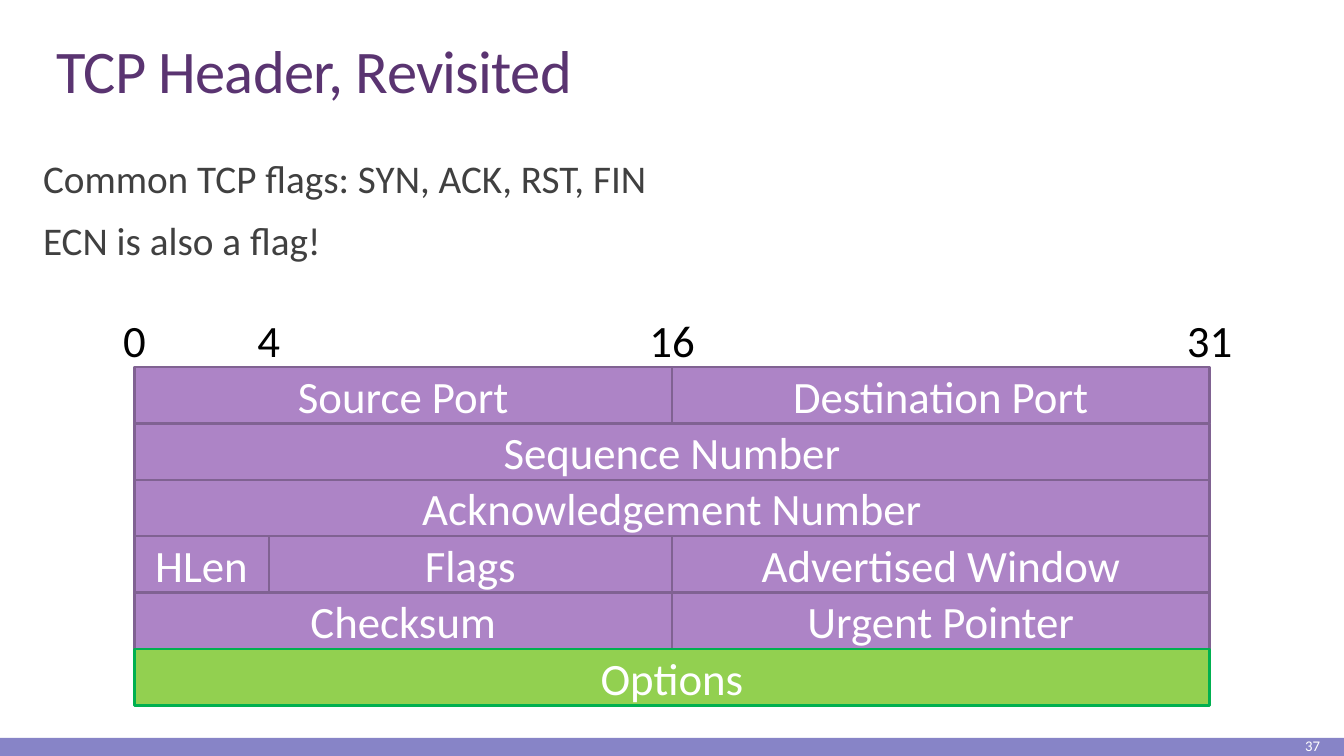
from pptx import Presentation
from pptx.dml.color import RGBColor
from pptx.enum.shapes import MSO_SHAPE as Shape
from pptx.enum.text import MSO_ANCHOR as Anchor, PP_ALIGN as Align
from pptx.util import Inches, Pt

TITLE = "TCP Header, Revisited"
NOTES = ["Common TCP flags: SYN, ACK, RST, FIN", "ECN is also a flag!"]
PAGE_NUMBER = "37"

# Bit number shown, bit offset where it stands
BIT_MARKS = [("0", 0), ("4", 4), ("16", 16), ("31", 32)]

# Header rows: field name, width in bits
HEADER_ROWS = [
    [("Source Port", 16), ("Destination Port", 16)],
    [("Sequence Number", 32)],
    [("Acknowledgement Number", 32)],
    [("HLen", 4), ("Flags", 12), ("Advertised Window", 16)],
    [("Checksum", 16), ("Urgent Pointer", 16)],
    [("Options", 32)],
]

COLORS = {
    "title": "5A3471", "body": "404040", "mark": "000000", "white": "FFFFFF",
    "bar": "8784C7", "field": "AD84C6", "field_line": "806292",
    "options": "92D050", "options_line": "00B050",
}
FONT = "Calibri"
HEADER_LEFT, HEADER_TOP = 1.0, 2.73
BIT_WIDTH, ROW_HEIGHT = 0.25, 0.42
MARK_WIDTH, MARK_HEIGHT, MARK_TOP = 0.65, 0.66, 2.2


def color(name):
    return RGBColor.from_string(COLORS[name])


def write(shape, text, size, color_name, align=Align.LEFT, anchor=Anchor.MIDDLE):
    frame = shape.text_frame
    frame.word_wrap = True
    frame.vertical_anchor = anchor
    frame.text = text
    for paragraph in frame.paragraphs:
        paragraph.alignment = align
        for run in paragraph.runs:
            run.font.name = FONT
            run.font.size = Pt(size)
            run.font.color.rgb = color(color_name)
    return frame


def add_text(slide, box, *style):
    return write(slide.shapes.add_textbox(*map(Inches, box)), *style)


def add_box(slide, box, fill, line=None):
    shape = slide.shapes.add_shape(Shape.RECTANGLE, *map(Inches, box))
    shape.shadow.inherit = False
    shape.fill.solid()
    shape.fill.fore_color.rgb = color(fill)
    if line:
        shape.line.color.rgb = color(line)
        shape.line.width = Pt(1.25)
    else:
        shape.line.fill.background()
    return shape


def bit_x(bit):
    return HEADER_LEFT + bit * BIT_WIDTH


# Slide in 16:9
presentation = Presentation()
presentation.slide_width = Inches(10)
presentation.slide_height = Inches(10) * 9 // 16
slide = presentation.slides.add_slide(presentation.slide_layouts[6])

# Footer bar and page number
add_box(slide, (0, 5.49, 10, 0.14), "bar")
add_text(slide, (8.84, 5.46, 1.08, 0.17), PAGE_NUMBER, 7.9, "white", Align.RIGHT)

# Title
title = add_text(slide, (0.32, 0.24, 9.48, 0.6), TITLE, 32.4, "title",
                 Align.LEFT, Anchor.BOTTOM).paragraphs[0]
title.line_spacing = 0.85
title.runs[0].font._element.set("spc", "-40")

# Notes on flags
notes = add_text(slide, (0.32, 1.14, 9.48, 0.91), "\n".join(NOTES), 21, "body",
                 Align.LEFT, Anchor.TOP)
notes.margin_left = notes.margin_right = 0
for index, paragraph in enumerate(notes.paragraphs):
    paragraph.line_spacing = 0.9
    paragraph.space_before = Pt(9 if index else 0)
    paragraph.space_after = Pt(1.5)

# Bit numbers, centred on their offsets
for label, bit in BIT_MARKS:
    left = bit_x(bit) - MARK_WIDTH / 2
    add_text(slide, (left, MARK_TOP, MARK_WIDTH, MARK_HEIGHT), label, 24, "mark",
             Align.CENTER)

# Header fields, as wide as their bits
for row, fields in enumerate(HEADER_ROWS):
    top = HEADER_TOP + row * ROW_HEIGHT
    bit = 0
    for name, bits in fields:
        kind = "options" if name == "Options" else "field"
        box = (bit_x(bit), top, bits * BIT_WIDTH, ROW_HEIGHT)
        write(add_box(slide, box, kind, kind + "_line"), name, 24, "white",
              Align.CENTER)
        bit += bits

presentation.save("out.pptx")
